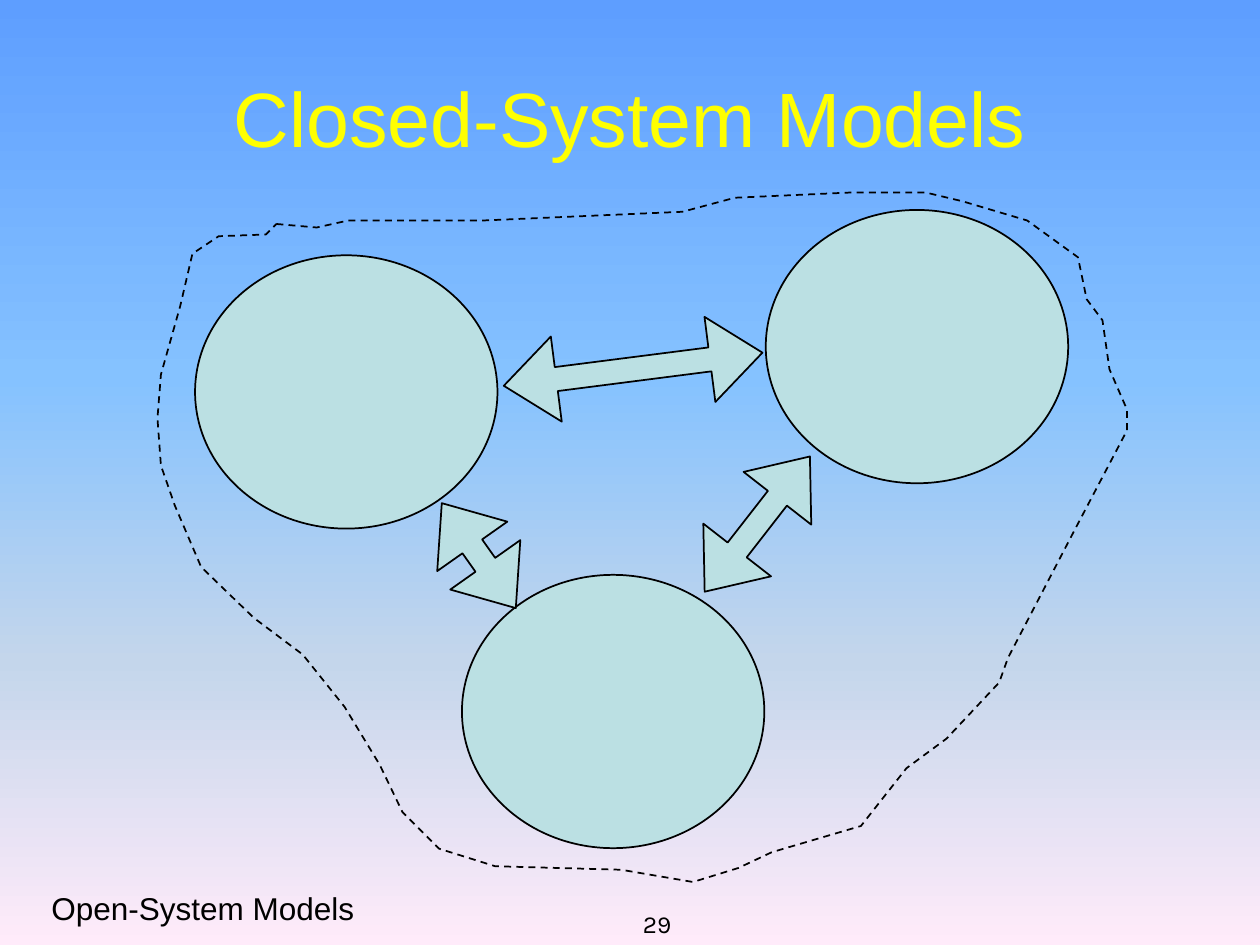
"""Build the Closed-System Models slide."""
from copy import deepcopy

from pptx import Presentation
from pptx import util as u
from pptx.dml import color
from pptx.enum import dml, shapes, text
from pptx.oxml import ns

Pt = u.Pt
COLORS = {"title": "FFFF00", "ink": "000000", "body": "BBE0E3"}
SKY = [(0, "5E9EFF"), (0.4, "85C2FF"), (0.7, "C4D6EB"), (1, "FFEBFA")]


def style(sp):
    sp.shadow.inherit = False
    sp.fill.solid()
    sp.fill.fore_color.rgb = color.RGBColor.from_string(COLORS["body"])
    sp.line.color.rgb = color.RGBColor.from_string(COLORS["ink"])
    sp.line.width = Pt(1)


prs = Presentation()
prs.slide_width, prs.slide_height = Pt(720), Pt(540)
s = prs.slides.add_slide(prs.slide_layouts[6])

bg = s.background.fill
bg.gradient()
bg.gradient_angle = 270
stops = next(s._element.iter(ns.qn("a:gsLst")))
for _ in range(len(SKY) - len(stops)):
    stops.append(deepcopy(stops[0]))
for stop, (position, rgb) in zip(bg.gradient_stops, SKY):
    stop.position = position
    stop.color.rgb = color.RGBColor.from_string(rgb)

LEFT, CENTER = text.PP_ALIGN.LEFT, text.PP_ALIGN.CENTER
TOP, MIDDLE, BOTTOM = text.MSO_ANCHOR.TOP, text.MSO_ANCHOR.MIDDLE, text.MSO_ANCHOR.BOTTOM
labels = [
    ("29", (261.5, 504, 228, 36), 14, "Karla", "ink", CENTER, BOTTOM),
    ("Closed-System Models", (36, 21.6, 648, 90), 44, "Arial", "title", CENTER, MIDDLE),
    ("Open-System Models", (22.3, 504.7, 264, 28.8), 18, "Arial", "ink", LEFT, TOP),
]
for words, box, size, font, ink, align, anchor in labels:
    tf = s.shapes.add_textbox(*map(Pt, box)).text_frame
    tf.word_wrap = True
    tf.vertical_anchor = anchor
    p = tf.paragraphs[0]
    p.text = words
    p.alignment = align
    p.font.size = Pt(size)
    p.font.name = font
    p.font.color.rgb = color.RGBColor.from_string(COLORS[ink])

for x, y in [(437.6, 120), (264, 328.5), (111.5, 145.9)]:
    style(s.shapes.add_shape(shapes.MSO_SHAPE.OVAL, Pt(x), Pt(y), Pt(172.8), Pt(156.2)))

arrows = [(287.3, 186.5, 149, 352.7), (383.8, 275, 97.9, 307.9), (236.9, 293, 73.4, 54.8)]
for x, y, width, angle in arrows:
    sp = s.shapes.add_shape(shapes.MSO_SHAPE.LEFT_RIGHT_ARROW, Pt(x), Pt(y), Pt(width), Pt(49))
    sp.adjustments[0], sp.adjustments[1] = 0.281, 0.617
    sp.rotation = angle
    style(sp)

boundary = [
    (158, 128), (181, 130), (199, 126), (276, 126), (390, 121), (420, 113), (486, 110),
    (529, 110), (550, 115), (587, 126), (616, 147), (621, 171), (630, 183), (634, 211),
    (644, 234), (644, 246), (613, 305), (576, 376), (571, 390), (541, 422), (518, 439),
    (492, 472), (441, 487), (422, 496), (396, 504), (355, 497), (283, 495), (251, 485),
    (230, 464), (217, 437), (197, 404), (173, 374), (145, 353), (115, 324), (100, 289),
    (92, 266), (90, 239), (92, 214), (103, 175), (110, 145), (125, 135), (152, 134),
]
builder = s.shapes.build_freeform(*boundary[0], scale=Pt(1))
builder.add_line_segments(boundary[1:], close=True)
sp = builder.convert_to_shape()
style(sp)
sp.fill.background()
sp.line.dash_style = dml.MSO_LINE.DASH

prs.save("out.pptx")
